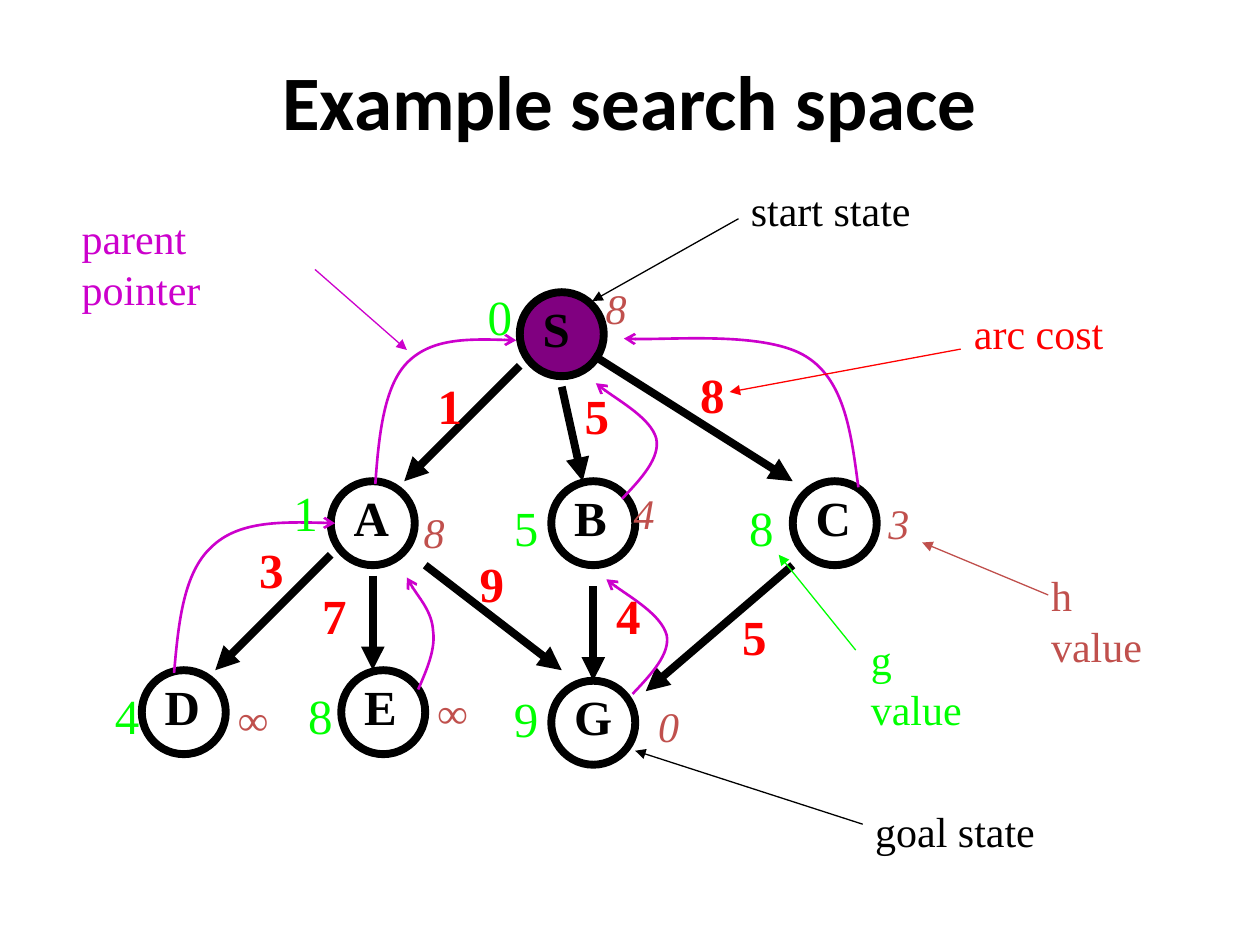
from typing import NamedTuple

from lxml.etree import SubElement
from pptx import Presentation
from pptx.dml.color import RGBColor
from pptx.enum.shapes import MSO_CONNECTOR, MSO_SHAPE
from pptx.enum.text import MSO_ANCHOR, PP_ALIGN
from pptx.oxml.ns import qn
from pptx.util import Pt

Point = tuple[float, float]


class Theme:
    black, white = "000000", "FFFFFF"
    start, cost, h, g, parent = "800080", "FF0000", "C0504D", "00FF00", "CC00CC"
    head, body = "Calibri", "Times New Roman"
    title, large, small = 44, 28, 24
    thick, curve, thin = 4.5, 1.5, 0.75
    node, inset = 48, 6


class Node(NamedTuple):
    name: str
    at: Point
    wide: float
    fill: str = Theme.white


class Arc(NamedTuple):
    begin: Point
    end: Point
    cost: str
    at: Point


class Value(NamedTuple):
    text: str
    at: Point
    wide: float = 27


class Caption(NamedTuple):
    text: str
    at: Point
    wide: float
    color: str
    begin: Point
    end: Point


NODES = [
    Node("S", (297, 167), 30, Theme.start),
    Node("C", (453, 275), 34.5),
    Node("B", (315, 275), 33),
    Node("A", (189, 275), 34.5),
    Node("D", (81, 383), 34.5),
    Node("G", (315, 389), 36),
    Node("E", (195, 383), 33),
]
ARCS = [
    Arc((297, 209), (231, 275), "1", (243, 211)),
    Arc((321, 221), (333, 275), "5", (327, 217)),
    Arc((339, 203), (453, 275), "8", (393, 205)),
    Arc((243, 323), (321, 383), "9", (267, 313)),
    Arc((339, 335), (339, 389), "4", (345, 331)),
    Arc((453, 323), (369, 395), "5", (417, 343)),
    Arc((189, 317), (123, 383), "3", (141, 305)),
    Arc((213, 329), (213, 383), "7", (177, 331)),
]
H_VALUES = [
    Value("8", (339, 158)),
    Value("8", (235, 286)),
    Value("4", (355, 275)),
    Value("3", (500.5, 281)),
    Value("∞", (243, 389), 32),
    Value("∞", (129, 393), 32),
    Value("0", (369, 397)),
]
G_VALUES = [
    Value("0", (271.5, 160), 29),
    Value("1", (160.5, 272), 29),
    Value("4", (58.5, 388), 29),
    Value("8", (169, 388), 29),
    Value("9", (286.5, 390), 29),
    Value("8", (421, 281), 29),
    Value("5", (286.5, 281), 29),
]
CAPTIONS = [
    Caption("start state", (422, 102), 106, Theme.black, (422, 125), (338.5, 172)),
    Caption("goal state", (493, 456.5), 106, Theme.black, (493, 471), (363, 429)),
    Caption("arc cost", (549.5, 172), 88.5, Theme.cost, (549, 199.5), (417, 224)),
    Caption("h value", (593.5, 322), 84, Theme.h, (599, 340), (527, 310)),
    Caption("parent pointer", (39.5, 118), 148, Theme.parent, (180, 154), (232.5, 200)),
    Caption("g value", (490.5, 358.5), 84, Theme.g, (489, 371.5), (445, 317)),
]
# Each pointer: a start, then three Bézier points for each of two segments.
POINTERS = [
    [(214.5, 276.5), (216.5, 248.5), (219.5, 221), (232.5, 207.5),
     (246, 193.5), (270.5, 193.5), (295, 194.5)],
    [(99.5, 384.5), (102, 355.5), (105, 327), (121, 312.5),
     (136, 298), (163.5, 298), (191.5, 299)],
    [(239, 394), (244, 382.5), (249, 371), (247.5, 360.5),
     (247, 350), (234.5, 335), (232.5, 330)],
    [(361.5, 396.5), (372.5, 385), (383, 373.5), (381, 363),
     (378, 351.5), (352, 336), (346.5, 331)],
    [(355.5, 285), (366.5, 273.5), (377.5, 261.5), (375, 250.5),
     (372, 239.5), (346.5, 224.5), (340.5, 219)],
    [(490.5, 278.5), (486.5, 248.5), (483, 218), (461, 204),
     (438.5, 189.5), (374.5, 195), (356.5, 193.5)],
]


def write(slide, text: str, at: Point, wide: float, *, high: float = 0,
          size: float = Theme.large, color: str = Theme.black,
          font: str = Theme.body, bold: bool = False, slant: bool = False,
          align=PP_ALIGN.LEFT, anchor=MSO_ANCHOR.TOP, wrap: bool = False) -> None:
    high = high or size * 1.2 + 7.2
    box = slide.shapes.add_textbox(Pt(at[0]), Pt(at[1]), Pt(wide), Pt(high))
    frame = box.text_frame
    frame.word_wrap, frame.vertical_anchor = wrap, anchor
    para = frame.paragraphs[0]
    para.alignment = align
    run = para.add_run()
    run.text = text
    run.font.name, run.font.size = font, Pt(size)
    run.font.bold, run.font.italic = bold, slant
    run.font.color.rgb = RGBColor.from_string(color)


def stroke(shape, color: str, width: float, tip: str = "") -> None:
    shape.line.color.rgb = RGBColor.from_string(color)
    shape.line.width = Pt(width)
    if tip:
        line = shape.element.spPr.find(qn("a:ln"))
        SubElement(line, qn("a:tailEnd"), type=tip)


def arrow(slide, begin: Point, end: Point, color: str, width: float) -> None:
    ends = [Pt(v) for v in (*begin, *end)]
    line = slide.shapes.add_connector(MSO_CONNECTOR.STRAIGHT, *ends)
    stroke(line, color, width, "triangle")
    SubElement(line.element.spPr, qn("a:effectLst"))


def pointer(slide, points: list[Point]) -> None:
    """Draw a curved arrow through groups of three Bézier points."""
    start, *rest = [(Pt(x), Pt(y)) for x, y in points]
    pen = slide.shapes.build_freeform(*start, scale=1.0)
    pen.add_line_segments(rest, close=False)
    shape = pen.convert_to_shape()
    shape.fill.background()
    shape.shadow.inherit = False
    stroke(shape, Theme.parent, Theme.curve, "arrow")
    track = next(shape.element.iter(qn("a:path")))
    steps = track.findall(qn("a:lnTo"))
    for i in range(0, len(steps), 3):
        bend = SubElement(track, qn("a:cubicBezTo"))
        for step in steps[i:i + 3]:
            bend.append(step[0])
            track.remove(step)


def circle(slide, node: Node) -> None:
    x, y = node.at
    side = Pt(Theme.node)
    shape = slide.shapes.add_shape(MSO_SHAPE.OVAL, Pt(x), Pt(y), side, side)
    shape.fill.solid()
    shape.fill.fore_color.rgb = RGBColor.from_string(node.fill)
    shape.shadow.inherit = False
    stroke(shape, Theme.black, Theme.thick)
    write(slide, node.name, (x + Theme.inset, y), node.wide, bold=True)


def main() -> None:
    deck = Presentation()
    deck.slide_width, deck.slide_height = Pt(720), Pt(540)
    slide = deck.slides.add_slide(deck.slide_layouts[6])
    write(slide, "Example search space", (54, 12), 612, high=90,
          size=Theme.title, font=Theme.head, bold=True,
          align=PP_ALIGN.CENTER, anchor=MSO_ANCHOR.MIDDLE, wrap=True)
    for node in NODES:
        circle(slide, node)
    for arc in ARCS:
        arrow(slide, arc.begin, arc.end, Theme.black, Theme.thick)
    for arc in ARCS:
        write(slide, arc.cost, arc.at, 29, color=Theme.cost, bold=True)
    for value in H_VALUES:
        write(slide, *value, size=Theme.small, color=Theme.h, slant=True)
    for points in POINTERS:
        pointer(slide, points)
    for value in G_VALUES:
        write(slide, *value, color=Theme.g)
    for note in CAPTIONS:
        write(slide, note.text, note.at, note.wide, size=Theme.small, color=note.color)
        arrow(slide, note.begin, note.end, note.color, Theme.thin)
    deck.save("out.pptx")


if __name__ == "__main__":
    main()
